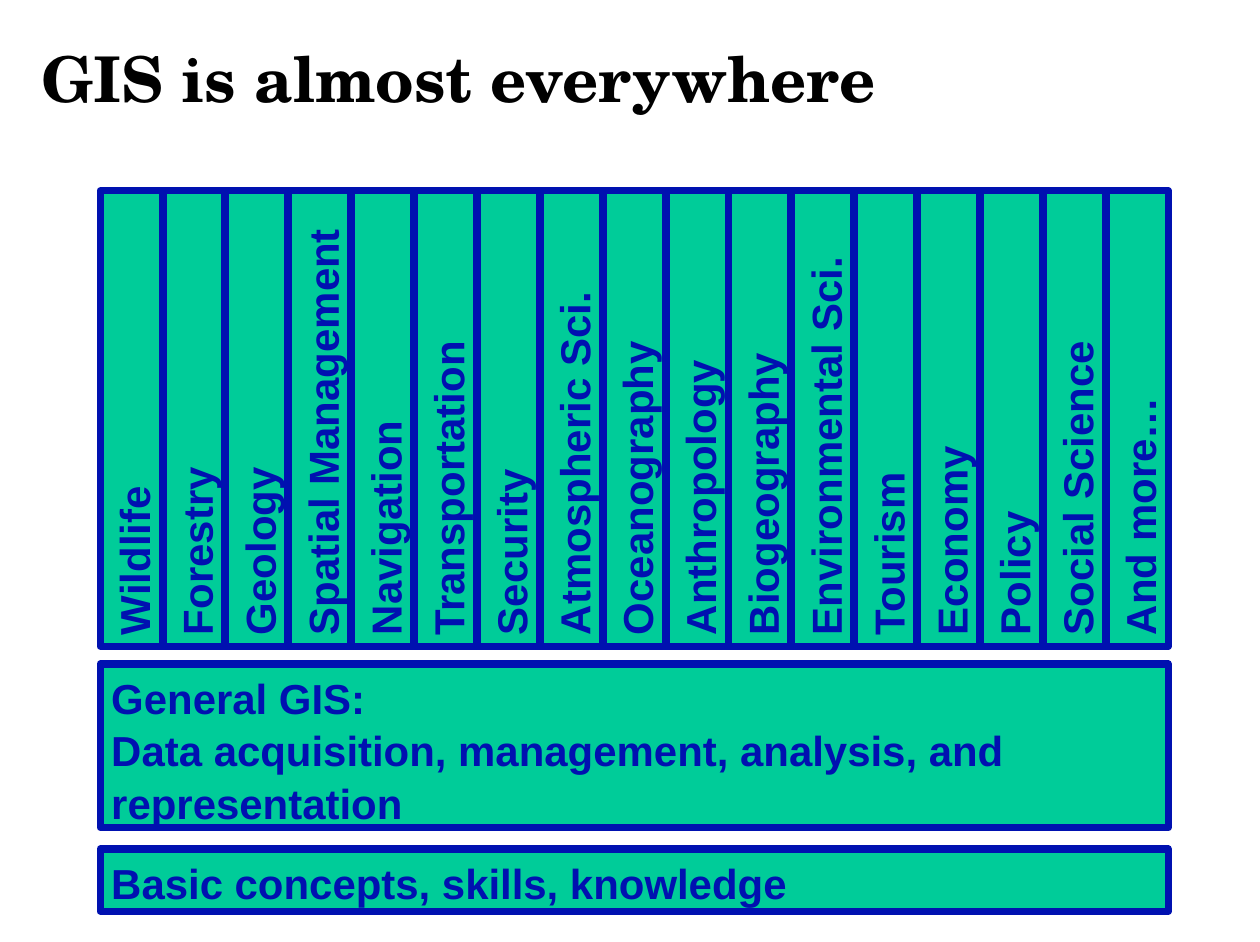
from pptx import Presentation
from pptx.dml.color import RGBColor
from pptx.enum.shapes import MSO_SHAPE
from pptx.enum.text import MSO_ANCHOR, MSO_AUTO_SIZE, PP_ALIGN
from pptx.util import Cm, Pt

TITLE = "GIS is almost everywhere"
FIELDS = [
    "Wildlife", "Forestry", "Geology", "Spatial Management", "Navigation",
    "Transportation", "Security", "Atmospheric Sci.", "Oceanography",
    "Anthropology", "Biogeography", "Environmental Sci.", "Tourism",
    "Economy", "Policy", "Social Science", "And more…",
]
# Lines of text, top and height in cm
FOUNDATIONS = [
    (["Basic concepts, skills, knowledge"], 19, 1.39),
    (["General GIS:",
      "Data acquisition, management, analysis, and representation"], 14.86, 3.66),
]
COLORS = {"fill": "00CC99", "ink": "0011B0", "title": "000000"}

LEFT, WIDTH = 2.24, 23.9
COLUMN_TOP, COLUMN_HEIGHT, COLUMN_WIDTH = 4.27, 10.19, 1.39


def color(name):
    return RGBColor.from_string(COLORS[name])


def set_font(paragraph, name, size, ink):
    paragraph.alignment = PP_ALIGN.LEFT
    font = paragraph.font
    font.name, font.size, font.bold = name, Pt(size), True
    font.color.rgb = color(ink)


def add_block(page, lines, left, top, width, height, rotation=0):
    box = page.shapes.add_shape(
        MSO_SHAPE.RECTANGLE, Cm(left), Cm(top), Cm(width), Cm(height))
    box.rotation = rotation
    box.shadow.inherit = False
    box.fill.solid()
    box.fill.fore_color.rgb = color("fill")
    box.line.color.rgb = color("ink")
    box.line.width = Pt(4.5)
    frame = box.text_frame
    frame.word_wrap = True
    frame.auto_size = MSO_AUTO_SIZE.SHAPE_TO_FIT_TEXT
    frame.vertical_anchor = MSO_ANCHOR.TOP
    frame.text = "\n".join(lines)
    for para in frame.paragraphs:
        para.line_spacing = 1.05
        set_font(para, "Arial", 26.6, "ink")


def add_column(page, label, left):
    """Add a block turned to read upwards; left is its edge after turning."""
    shift = (COLUMN_HEIGHT - COLUMN_WIDTH) / 2
    add_block(page, [label], left - shift, COLUMN_TOP + shift,
              COLUMN_HEIGHT, COLUMN_WIDTH, rotation=270)


def add_title(page):
    title = page.shapes.title
    title.left, title.top = Cm(0.64), Cm(0.43)
    title.width, title.height = Cm(22.66), Cm(2.59)
    frame = title.text_frame
    frame.text = TITLE
    frame.word_wrap = True
    frame.vertical_anchor = MSO_ANCHOR.MIDDLE
    frame.margin_left = frame.margin_right = Cm(0.28)
    frame.margin_top = frame.margin_bottom = Cm(0.15)
    set_font(frame.paragraphs[0], "TeX Gyre Schola", 40, "title")


def main():
    deck = Presentation()
    deck.slide_width, deck.slide_height = Cm(28.19), Cm(21.08)
    page = deck.slides.add_slide(deck.slide_layouts[5])
    add_title(page)
    for lines, top, height in FOUNDATIONS:
        add_block(page, lines, LEFT, top, WIDTH, height)
    pitch = (WIDTH - COLUMN_WIDTH) / (len(FIELDS) - 1)
    for index, field in enumerate(FIELDS):
        add_column(page, field, LEFT + index * pitch)
    deck.save("out.pptx")


if __name__ == "__main__":
    main()
